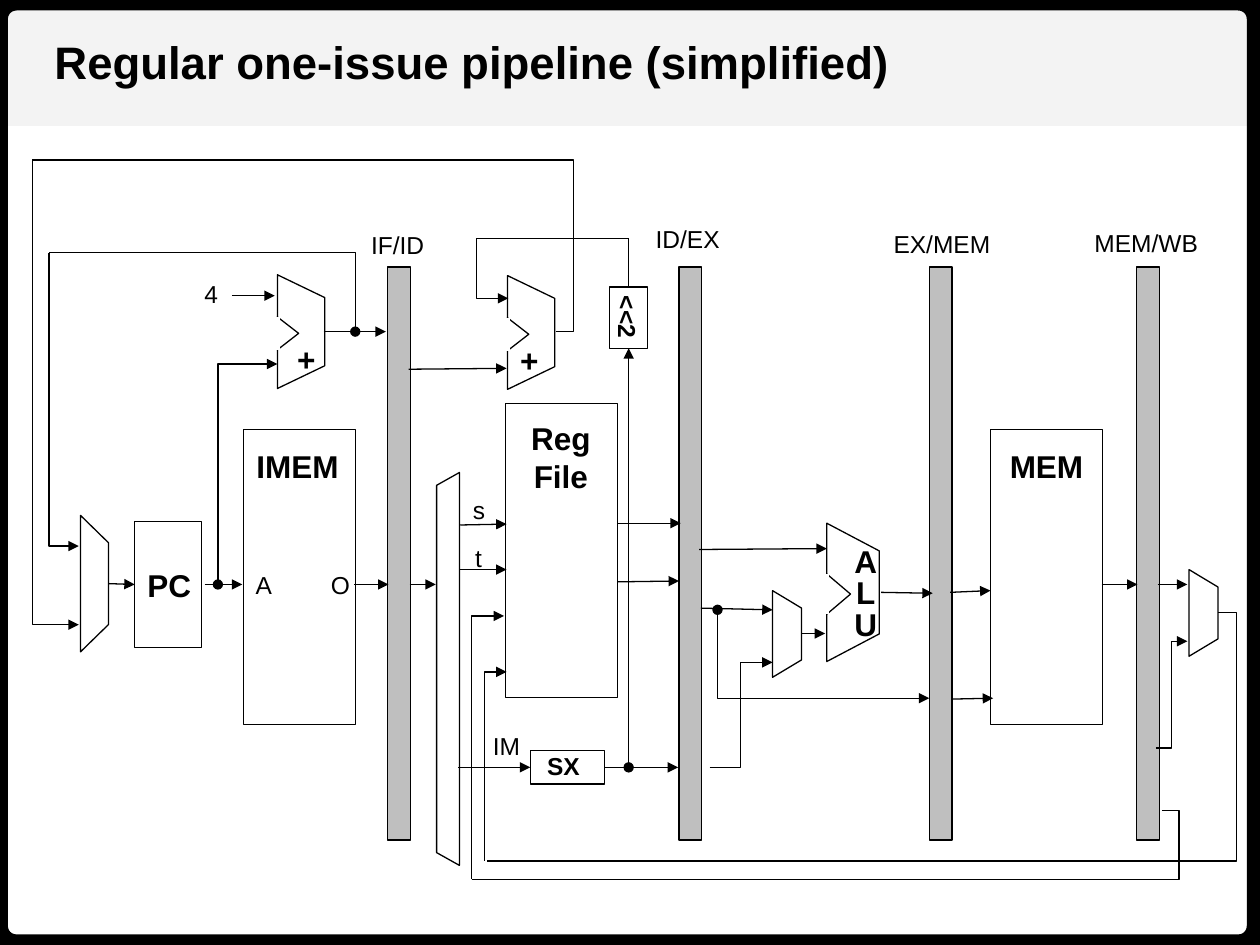
from lxml.etree import SubElement
from pptx import Presentation
from pptx.dml.color import RGBColor
from pptx.enum.shapes import MSO_CONNECTOR as Connector, MSO_SHAPE as Shape
from pptx.enum.text import PP_ALIGN as Align
from pptx.oxml.ns import qn
from pptx.util import Pt

BLACK = RGBColor(0, 0, 0)
WHITE = RGBColor(255, 255, 255)
HEADER = RGBColor(0xF3, 0xF3, 0xF3)
GRAY = RGBColor(0xBF, 0xBF, 0xBF)
TOP, LEFT, BOTTOM, RIGHT = range(4)

TITLE = ("Regular one-issue pipeline (simplified)", 24, 16, 497, 39)
BIG_LABELS = [
    ("Reg\nFile", 296, 236, 49, 51),
    ("IMEM", 139, 252, 62, 29),
    ("MEM", 569.5, 252, 57, 29),
    ("PC", 77, 320, 39.5, 29),
    ("+", 162.5, 191, 25, 29),
    ("+", 290, 191.5, 25, 29),
]
ALU_LABEL = ("A\nL\nU", 481, 309.5, 27.5, 62)
SX_LABEL = ("SX", 305.5, 430.5, 33, 19.5)
SHIFT_LABEL = ("<<2", 339, 169, 39, 24.5)
SMALL_LABELS = [
    ("A", 139, 322, 16.5, 24.5),
    ("O", 182, 322, 21, 24.5),
    ("4", 109.5, 156, 22.5, 24.5),
    ("IF/ID", 204.5, 128, 45.5, 24.5),
    ("ID/EX", 367, 124.5, 52, 24.5),
    ("EX/MEM", 503, 127.5, 70.5, 24.5),
    ("MEM/WB", 618, 126.5, 74, 24.5),
    ("s", 263, 279.5, 21.5, 24.5),
    ("t", 264, 307, 19, 24.5),
    ("IM", 274.5, 414, 30, 24.5),
]

BOXES = {
    "Reg File": (289, 230.5, 64, 168),
    "IMEM": (139, 245.5, 64, 168.5),
    "MEM": (566, 245.5, 64, 168.5),
    "PC": (77, 298, 38, 72),
    "SX": (303, 429, 42.5, 19),
    "Shift": (348.5, 164, 21.5, 35),
}
REGISTER_LEFTS = [221.5, 388, 531, 649.5]
MUXES = [(46, 294.5, 16, 78), (679.5, 325.5, 16.5, 49.5), (441.5, 337.5, 16.5, 49.5)]
ADDERS = [(158.5, 157, 27, 65), (290, 157.5, 27, 65), (472.5, 299, 30, 79)]
DECODER = (249.5, 270, 13, 224.5)

ARROW = {"tailEnd": "triangle"}
DOT_ARROW = {"headEnd": "oval", "tailEnd": "triangle"}
PLAIN = {}

STRAIGHT_ARROWS = [
    (117, 334, 138.5, 334),
    (132.5, 169, 157, 169),
    (202.5, 334, 222, 334),
    (263, 325.5, 289.5, 325.5),
    (263, 300, 289.5, 299.5),
    (353, 299, 389, 299),
    (353, 332.5, 388, 332),
    (629.5, 334, 650, 334),
    (234, 334, 249, 334),
    (233.5, 211, 289.5, 210.5),
    (543, 338.5, 566, 337.5),
    (543.5, 399.5, 567.5, 399),
    (661.5, 334, 678.5, 334),
    (458, 362, 471.5, 362),
    (503.5, 338.5, 533, 339),
    (399.5, 314, 472.5, 313.5),
    (400.5, 347.5, 441.5, 348.5),
]
JOINED_LINES = [
    ((62, 333.5, 77, 334), ARROW, None, ("PC", LEFT)),
    ((262, 438.5, 303, 438.5), ARROW, None, ("SX", LEFT)),
    ((345.5, 438.5, 387.5, 438.5), ARROW, ("SX", RIGHT), None),
    ((359.25, 438.5, 359.25, 199), DOT_ARROW, None, ("Shift", BOTTOM)),
    ((359.25, 164, 359.25, 136.5), PLAIN, ("Shift", TOP), None),
]
ELBOWS = [
    ((185, 189.5, 28, 144.5), 203, PLAIN),
    ((124.5, 334, 158.5, 208), 124.5, DOT_ARROW),
    ((28, 144.5, 45, 312), 28, ARROW),
    ((18.5, 91.5, 45, 357), 18.5, ARROW),
    ((359.25, 136.5, 290.5, 170.5), 272.5, ARROW),
    ((317.5, 189.5, 18.5, 91.5), 328, PLAIN),
    ((696, 350, 278.5, 492), 707, PLAIN),
    ((277, 492, 289.5, 384), 277, ARROW),
    ((660.5, 427.5, 678.5, 366.5), 669.5, ARROW),
    ((664, 463, 269.5, 502.5), 674, PLAIN),
    ((269.5, 502.5, 288, 352), 269.5, ARROW),
    ((405.5, 438.5, 441.5, 378.5), 423, ARROW),
    ((410, 348.5, 531, 399), 410, DOT_ARROW),
]

presentation = Presentation()
presentation.slide_width, presentation.slide_height = Pt(720), Pt(540)
slide = presentation.slides.add_slide(presentation.slide_layouts[6])


def add_block(kind, frame, fill=None, line=BLACK, width=0.75, rotation=0):
    left, top, wide, high = frame
    if rotation:
        left, top = left + (wide - high) / 2, top + (high - wide) / 2
        wide, high = high, wide
    shape = slide.shapes.add_shape(kind, Pt(left), Pt(top), Pt(wide), Pt(high))
    shape.rotation = rotation
    shape.shadow.inherit = False
    if fill is None:
        shape.fill.background()
    else:
        shape.fill.solid()
        shape.fill.fore_color.rgb = fill
    if line is None:
        shape.line.fill.background()
    else:
        shape.line.color.rgb = line
        shape.line.width = Pt(width)
    return shape


def add_label(label, size, bold, align=Align.CENTER, spacing=None, rotation=0):
    text, *frame = label
    box = slide.shapes.add_textbox(*map(Pt, frame))
    box.rotation = rotation
    box.text_frame.word_wrap = False
    font = {"name": "Arial", "size": Pt(size), "bold": bold}
    for index, words in enumerate(text.split("\n")):
        paragraphs = box.text_frame.paragraphs
        paragraph = box.text_frame.add_paragraph() if index else paragraphs[0]
        paragraph.alignment = align
        if spacing:
            paragraph.line_spacing = Pt(spacing)
        run = paragraph.add_run()
        run.text = words
        for name, value in font.items():
            setattr(run.font, name, value)
        run.font.color.rgb = BLACK


def add_wire(points, ends, via=None, color=BLACK, width=0.75):
    kind = Connector.STRAIGHT if via is None else Connector.ELBOW
    wire = slide.shapes.add_connector(kind, *map(Pt, points))
    wire.line.color.rgb = color
    wire.line.width = Pt(width)
    properties = wire._element.spPr
    for end, head in ends.items():
        SubElement(properties.find(qn("a:ln")), qn("a:" + end), type=head)
    SubElement(properties, qn("a:effectLst"))
    if via is not None:
        start, _, stop, _ = points
        bend = round((via - start) / (stop - start) * 100000)
        geometry = properties.find(qn("a:prstGeom"))
        guides = geometry.find(qn("a:avLst"))
        if guides is None:
            guides = SubElement(geometry, qn("a:avLst"))
        SubElement(guides, qn("a:gd"), name="adj1", fmla=f"val {bend}")
    return wire


def add_adder(frame):
    left, top, wide, high = frame
    notch_high = high * 0.29
    notch_top = top + (high - notch_high) / 2 + 1
    add_block(Shape.FLOWCHART_MANUAL_OPERATION, frame, rotation=270)
    add_block(Shape.ISOSCELES_TRIANGLE, (left, notch_top, wide * 0.45, notch_high), rotation=90)
    add_wire((left, notch_top, left, notch_top + notch_high), PLAIN, color=WHITE, width=3)


add_block(Shape.RECTANGLE, (0, 0, 720, 72), HEADER, None)
border = add_block(Shape.ROUNDED_RECTANGLE, (-1.5, 0, 720, 540), width=12)
border.adjustments[0] = 0.02
add_label(TITLE, 26, True, Align.LEFT)

boxes = {name: add_block(Shape.RECTANGLE, frame) for name, frame in BOXES.items()}
for register_left in REGISTER_LEFTS:
    add_block(Shape.RECTANGLE, (register_left, 152.5, 13, 327.5), GRAY)
for mux in MUXES:
    add_block(Shape.FLOWCHART_MANUAL_OPERATION, mux, rotation=270)
decoder = add_block(Shape.TRAPEZOID, DECODER, rotation=270)
decoder.adjustments[0] = 0.56
for adder in ADDERS:
    add_adder(adder)

for points in STRAIGHT_ARROWS:
    add_wire(points, ARROW)
add_wire((203, 189.5, 220.5, 189.5), DOT_ARROW)
add_wire((185.5, 189.5, 203, 189.5), PLAIN)
for points, ends, begin, end in JOINED_LINES:
    wire = add_wire(points, ends)
    if begin:
        wire.begin_connect(boxes[begin[0]], begin[1])
    if end:
        wire.end_connect(boxes[end[0]], end[1])
for points, via, ends in ELBOWS:
    add_wire(points, ends, via)

for label in BIG_LABELS:
    add_label(label, 18, True)
for label in SMALL_LABELS:
    add_label(label, 14, False)
add_label(ALU_LABEL, 18, True, spacing=18)
add_label(SX_LABEL, 14, True, spacing=12)
add_label(SHIFT_LABEL, 14, True, rotation=90)

presentation.save("out.pptx")
